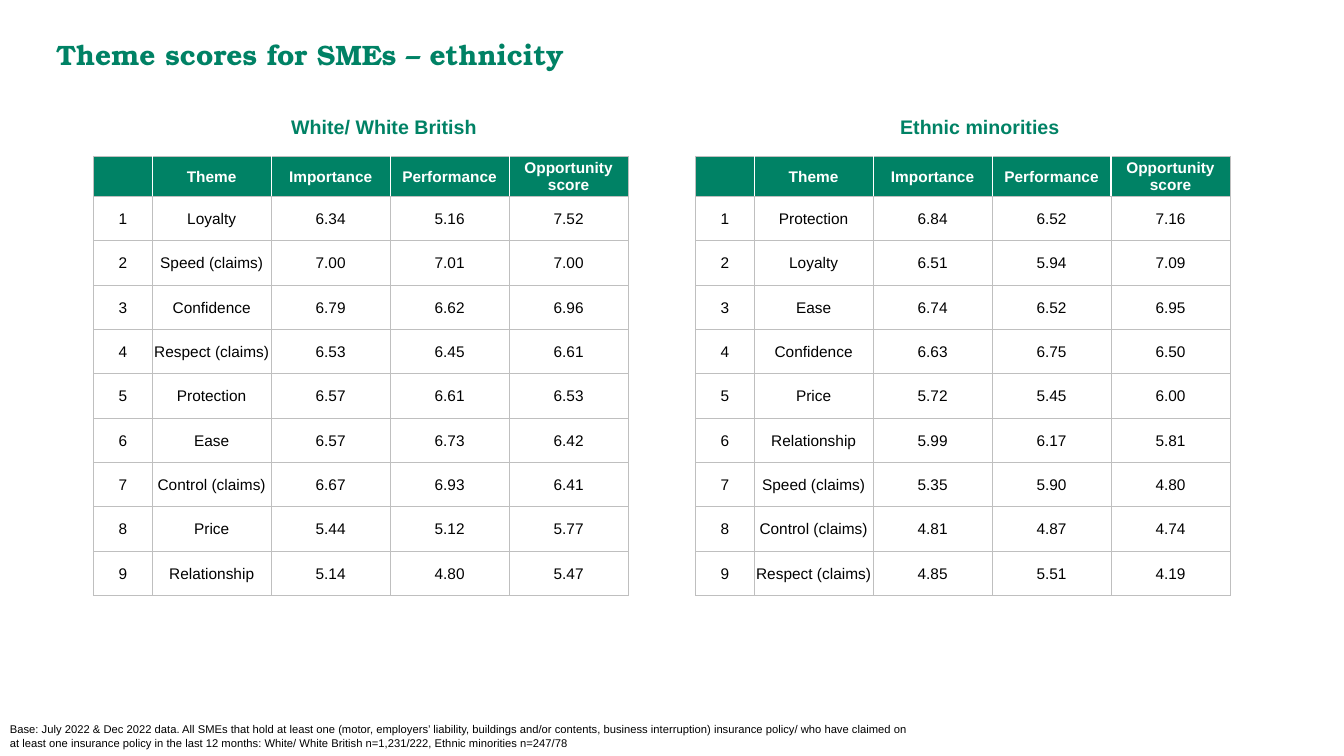
from pptx import Presentation
from pptx.dml.color import RGBColor
from pptx.enum.text import MSO_ANCHOR, PP_ALIGN
from pptx.oxml.ns import qn
from pptx.util import Inches, Pt
from lxml.etree import SubElement

GREEN = RGBColor(0x00, 0x82, 0x65)
GREY = RGBColor(0xBF, 0xBF, 0xBF)
WHITE = RGBColor(0xFF, 0xFF, 0xFF)
BLACK = RGBColor(0x00, 0x00, 0x00)

HEADERS = ("", "Theme", "Importance", "Performance", "Opportunity score")
COLUMN_WIDTHS = (0.58, 1.18, 1.18, 1.18, 1.18)
HEADER_HEIGHT, ROW_HEIGHT = 0.4, 0.44
CELL_MARGINS = {"margin_left": 0.01, "margin_right": 0.01, "margin_top": 0.01, "margin_bottom": 0}

# Group name, heading left, table left, (theme, importance, performance, opportunity)
GROUPS = [
    ("White/ White British", 2.79, 0.93, [
        ("Loyalty", "6.34", "5.16", "7.52"),
        ("Speed (claims)", "7.00", "7.01", "7.00"),
        ("Confidence", "6.79", "6.62", "6.96"),
        ("Respect (claims)", "6.53", "6.45", "6.61"),
        ("Protection", "6.57", "6.61", "6.53"),
        ("Ease", "6.57", "6.73", "6.42"),
        ("Control (claims)", "6.67", "6.93", "6.41"),
        ("Price", "5.44", "5.12", "5.77"),
        ("Relationship", "5.14", "4.80", "5.47"),
    ]),
    ("Ethnic minorities", 8.83, 6.9, [
        ("Protection", "6.84", "6.52", "7.16"),
        ("Loyalty", "6.51", "5.94", "7.09"),
        ("Ease", "6.74", "6.52", "6.95"),
        ("Confidence", "6.63", "6.75", "6.50"),
        ("Price", "5.72", "5.45", "6.00"),
        ("Relationship", "5.99", "6.17", "5.81"),
        ("Speed (claims)", "5.35", "5.90", "4.80"),
        ("Control (claims)", "4.81", "4.87", "4.74"),
        ("Respect (claims)", "4.85", "5.51", "4.19"),
    ]),
]


def write_text(text_frame, text, size, color, bold=False, font="Arial", align=PP_ALIGN.LEFT):
    text_frame.word_wrap = True
    paragraph = text_frame.paragraphs[0]
    paragraph.alignment = align
    run = paragraph.add_run()
    run.text = text
    for name, value in {"name": font, "size": Pt(size), "bold": bold}.items():
        setattr(run.font, name, value)
    run.font.color.rgb = color


def set_borders(cell, borders):
    """Draw the sides L, R, T, B given as (side, color, points) in that order."""
    properties = cell._tc.get_or_add_tcPr()
    for side, color, points in borders:
        line = SubElement(properties, qn(f"a:ln{side}"), w=str(Pt(points)))
        fill = SubElement(line, qn("a:solidFill"))
        SubElement(fill, qn("a:srgbClr"), val=str(color))


presentation = Presentation()
presentation.slide_width = Inches(13.33)
presentation.slide_height = Inches(7.5)
slide = presentation.slides.add_slide(presentation.slide_layouts[5])

title = slide.shapes.title
title.left, title.top, title.width, title.height = map(Inches, (0.46, 0.32, 12.28, 0.44))
title.text_frame.vertical_anchor = MSO_ANCHOR.TOP
write_text(title.text_frame, "Theme scores for SMEs – ethnicity", 20, GREEN, True, "TeX Gyre Bonum")

footnote = slide.shapes.add_textbox(Inches(0), Inches(7.12), Inches(9.23), Inches(0.38))
write_text(
    footnote.text_frame,
    "Base: July 2022 & Dec 2022 data. All SMEs that hold at least one (motor, employers’ liability, "
    "buildings and/or contents, business interruption) insurance policy/ who have claimed on at least "
    "one insurance policy in the last 12 months: White/ White British n=1,231/222, "
    "Ethnic minorities n=247/78",
    8, BLACK)

for group, heading_left, table_left, scores in GROUPS:
    heading = slide.shapes.add_textbox(Inches(heading_left), Inches(1.09), Inches(2.07), Inches(0.34))
    write_text(heading.text_frame, group, 14, GREEN, True)

    rows = [HEADERS] + [(str(rank), *score) for rank, score in enumerate(scores, 1)]
    table = slide.shapes.add_table(
        len(rows), len(HEADERS), Inches(table_left), Inches(1.55),
        Inches(sum(COLUMN_WIDTHS)), Inches(HEADER_HEIGHT + ROW_HEIGHT * len(scores))).table
    table.horz_banding = False
    for column, width in zip(table.columns, COLUMN_WIDTHS):
        column.width = Inches(width)

    for row_index, values in enumerate(rows):
        is_header = row_index == 0
        table.rows[row_index].height = Inches(HEADER_HEIGHT if is_header else ROW_HEIGHT)
        for column_index, value in enumerate(values):
            cell = table.cell(row_index, column_index)
            cell.vertical_anchor = MSO_ANCHOR.MIDDLE
            for margin, inches in CELL_MARGINS.items():
                setattr(cell, margin, Inches(inches))
            if value:
                write_text(cell.text_frame, value, 11, WHITE if is_header else BLACK,
                           is_header, align=PP_ALIGN.CENTER)

            outer, inner = (GREY, 0.75), (WHITE, 1) if is_header else (GREY, 0.75)
            left = outer if column_index == 0 else inner
            right = outer if column_index == len(HEADERS) - 1 else inner
            set_borders(cell, [("L", *left), ("R", *right), ("T", *outer), ("B", *outer)])
            if is_header:
                cell.fill.solid()
                cell.fill.fore_color.rgb = GREEN
            else:
                cell.fill.background()

presentation.save("out.pptx")
